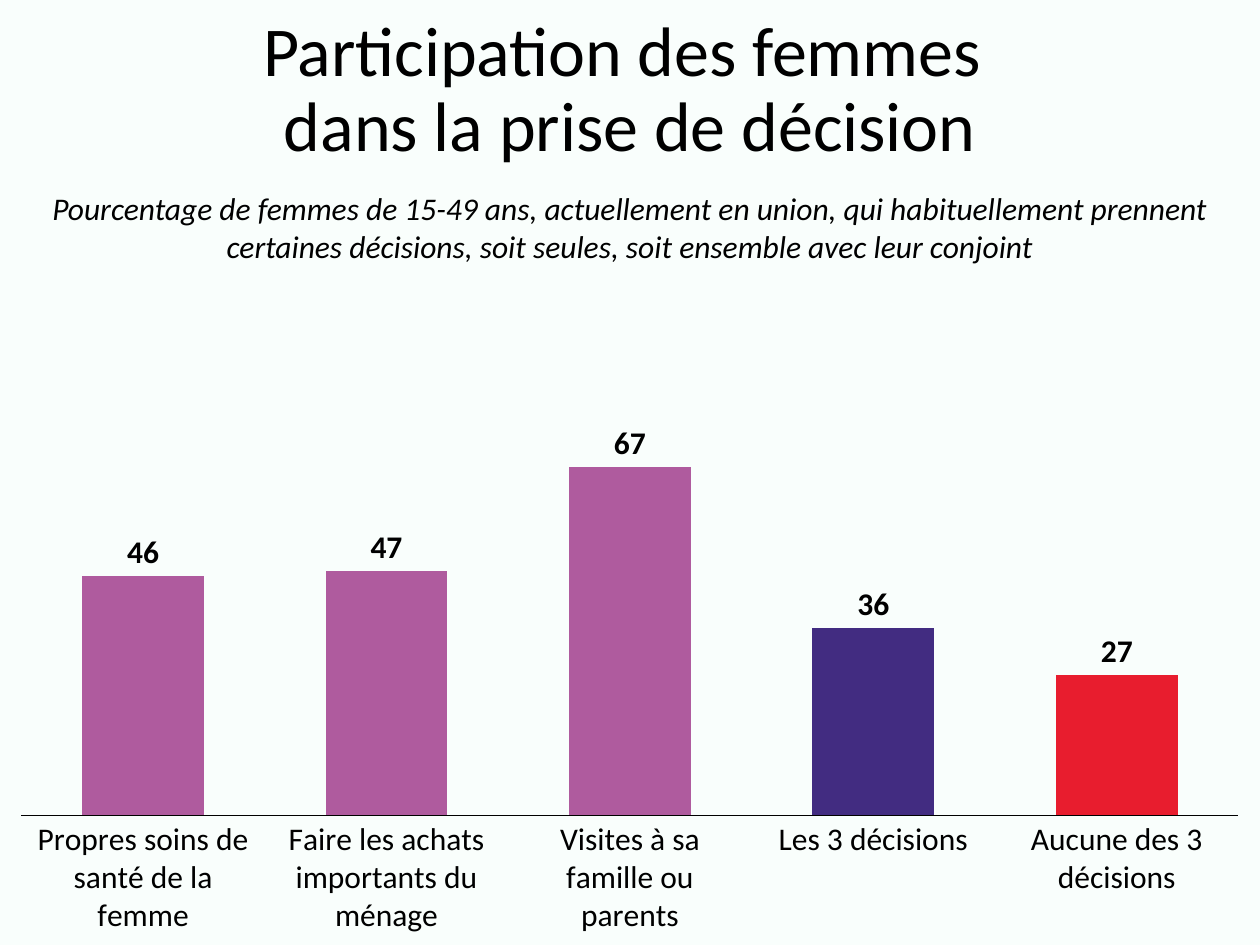
from dataclasses import dataclass

from lxml import etree
from pptx import Presentation
from pptx.chart.data import CategoryChartData
from pptx.dml.color import RGBColor
from pptx.enum import chart as ch, text as tx
from pptx.oxml import ns
from pptx.util import Inches, Pt


@dataclass(frozen=True)
class Theme:
    font: str = "Calibri"
    ink: str = "000000"
    back: str = "F9FEFC"
    bar: str = "AF5B9E"
    all_three: str = "422C81"
    none: str = "E81D2E"
    title: int = 40
    body: int = 18


THEME = Theme()
WIDTH = 10
VALUES = {
    "Propres soins de santé de la femme": 46,
    "Faire les achats importants du ménage": 47,
    "Visites à sa famille ou parents": 67,
    "Les 3 décisions": 36,
    "Aucune des 3 décisions": 27,
}
ACCENTS = {3: THEME.all_three, 4: THEME.none}
PLOT = {"x": 0.017, "y": 0.078, "w": 0.966, "h": 0.738}


def rgb(code):
    return RGBColor.from_string(code)


def paint(fill, code):
    fill.solid()
    fill.fore_color.rgb = rgb(code)


def style(font, size=THEME.body, bold=False, italic=False):
    font.name = THEME.font
    font.size = Pt(size)
    font.bold = bold
    font.italic = italic
    font.color.rgb = rgb(THEME.ink)


def place(shape, left, top, width, height):
    shape.left, shape.top = Inches(left), Inches(top)
    shape.width, shape.height = Inches(width), Inches(height)


def write(shape, words, anchor=tx.MSO_ANCHOR.TOP, fit=tx.MSO_AUTO_SIZE.NONE,
          spacing=1.0, **look):
    frame = shape.text_frame
    frame.word_wrap = True
    frame.auto_size = fit
    frame.vertical_anchor = anchor
    para = frame.paragraphs[0]
    para.text = words
    para.alignment = tx.PP_ALIGN.CENTER
    para.line_spacing = spacing
    for run in para.runs:
        style(run.font, **look)


def set_plot(chart):
    """Fix the inner plot area as fractions of the chart frame."""
    area = chart._chartSpace.find(".//" + ns.qn("c:plotArea"))
    for old in area.findall(ns.qn("c:layout")):
        area.remove(old)
    layout = etree.Element(ns.qn("c:layout"))
    manual = etree.SubElement(layout, ns.qn("c:manualLayout"))
    rules = {"layoutTarget": "inner", "xMode": "edge", "yMode": "edge", **PLOT}
    for name, value in rules.items():
        etree.SubElement(manual, ns.qn("c:" + name)).set("val", str(value))
    area.insert(0, layout)


def set_axes(chart):
    cats = chart.category_axis
    cats.major_tick_mark = cats.minor_tick_mark = ch.XL_TICK_MARK.NONE
    cats.format.line.width = Pt(0.75)
    paint(cats.format.line.fill, THEME.ink)
    style(cats.tick_labels.font)
    vals = chart.value_axis
    vals.minimum_scale, vals.maximum_scale = 0, 100
    vals.has_major_gridlines = False
    vals.visible = False


def set_bars(chart):
    plot = chart.plots[0]
    plot.gap_width = 100
    plot.vary_by_categories = False
    series = plot.series[0]
    paint(series.format.fill, THEME.bar)
    for index, code in ACCENTS.items():
        paint(series.points[index].format.fill, code)
    labels = series.data_labels
    labels.show_value = True
    labels.position = ch.XL_LABEL_POSITION.OUTSIDE_END
    style(labels.font, bold=True)


def add_bars(slide):
    data = CategoryChartData()
    data.categories = list(VALUES)
    data.add_series("Series 1", list(VALUES.values()))
    chart = slide.shapes.add_chart(
        ch.XL_CHART_TYPE.COLUMN_CLUSTERED, 0, Inches(1.91),
        Inches(WIDTH), Inches(5.59), data).chart
    chart.has_title = chart.has_legend = False
    style(chart.font, size=10)
    set_axes(chart)
    set_bars(chart)
    set_plot(chart)


def main():
    deck = Presentation()
    deck.slide_width, deck.slide_height = Inches(WIDTH), Inches(7.5)
    slide = deck.slides.add_slide(deck.slide_layouts[5])
    paint(slide.background.fill, THEME.back)

    title = slide.shapes.title
    place(title, 0, 0, WIDTH, 1.45)
    write(title, "Participation des femmes \vdans la prise de décision",
          anchor=tx.MSO_ANCHOR.MIDDLE, spacing=0.9, size=THEME.title)

    add_bars(slide)

    note = slide.shapes.add_textbox(0, Inches(1.45), Inches(WIDTH), Inches(0.71))
    write(note, "Pourcentage de femmes de 15-49 ans, actuellement en union, "
          "qui habituellement prennent certaines décisions, soit seules, "
          "soit ensemble avec leur conjoint",
          fit=tx.MSO_AUTO_SIZE.SHAPE_TO_FIT_TEXT, italic=True)
    deck.save("out.pptx")


if __name__ == "__main__":
    main()
